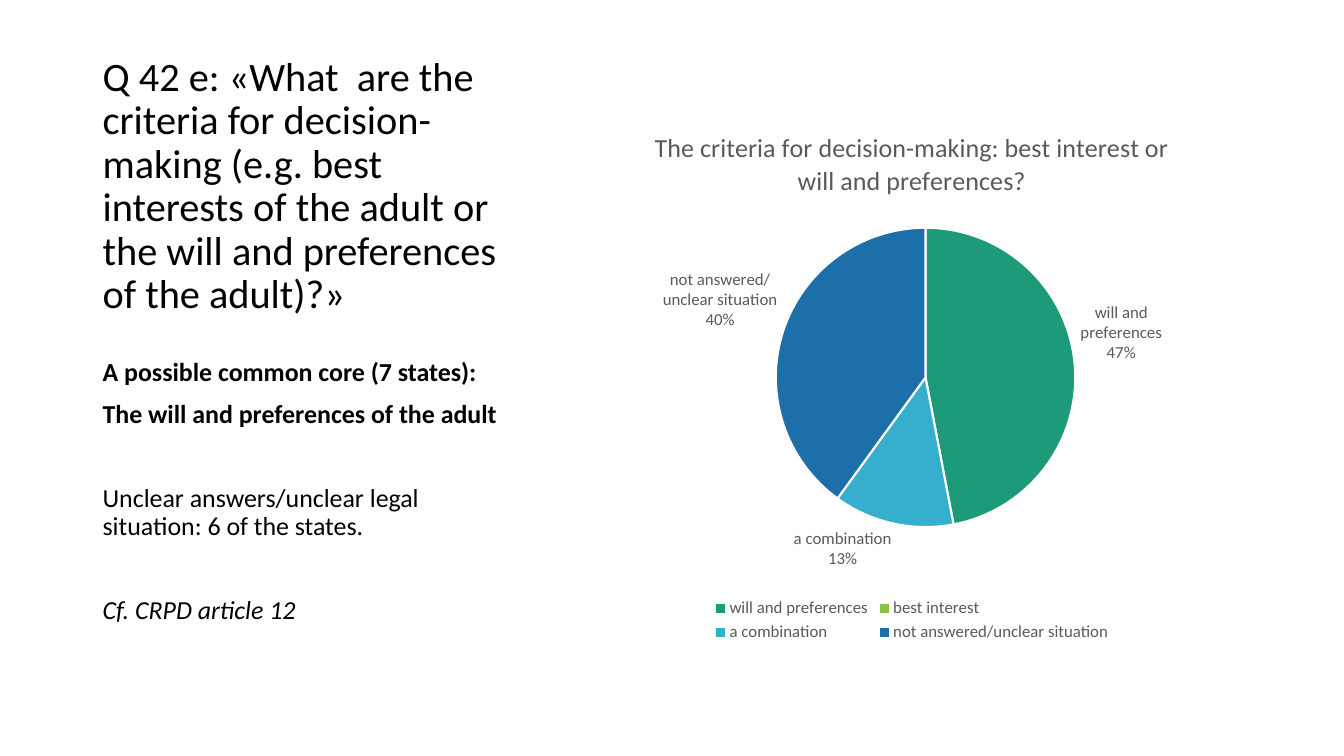
from lxml import etree
from pptx import Presentation
from pptx.chart.data import CategoryChartData
from pptx.dml.color import RGBColor
from pptx.enum.chart import XL_CHART_TYPE, XL_LABEL_POSITION, XL_LEGEND_POSITION
from pptx.enum.text import MSO_ANCHOR
from pptx.oxml import parse_xml
from pptx.oxml.ns import qn
from pptx.util import Inches, Pt

PIE = XL_CHART_TYPE.PIE
OUTER = XL_LABEL_POSITION.OUTSIDE_END
BELOW = XL_LEGEND_POSITION.BOTTOM
TOP, BOTTOM = MSO_ANCHOR.TOP, MSO_ANCHOR.BOTTOM
BLACK = RGBColor(0x00, 0x00, 0x00)
WHITE = RGBColor(0xFF, 0xFF, 0xFF)
GREY = RGBColor(0x59, 0x59, 0x59)
TEAL = RGBColor(0x1D, 0x9A, 0x78)
GREEN = RGBColor(0x8B, 0xC1, 0x45)
AQUA = RGBColor(0x36, 0xAF, 0xCE)
BLUE = RGBColor(0x1D, 0x6F, 0xA9)
FACE = "Calibri"
SPACE = "http://schemas.openxmlformats.org/drawingml/2006/chart"

WIDE, HIGH = 13.33, 7.5
LEFT, COLUMN = 0.92, 4.3

HEADING = "The criteria for decision-making: best interest or will and preferences?"
QUESTION = ("Q 42 e: «What  are the criteria for decision-making (e.g. best interests "
            "of the adult or the will and preferences of the adult)?»")
NOTES = [
    ("A possible common core (7 states):", 0, True, False),
    ("The will and preferences of the adult", 10, True, False),
    ("Unclear answers/unclear legal situation: 6 of the states.", 40, False, False),
    ("Cf. CRPD article 12", 40, False, True),
]
SLICES = [
    ("will and preferences", 47, TEAL),
    ("best interest", 0, GREEN),
    ("a combination", 13, AQUA),
    ("not answered/unclear situation", 40, BLUE),
]


def style(font, size, color):
    font.name = FACE
    font.size = Pt(size)
    font.color.rgb = color


def add_text(slide, box, lines, size, anchor):
    frame = slide.shapes.add_textbox(*map(Inches, box)).text_frame
    frame.word_wrap = True
    frame.vertical_anchor = anchor
    for i, (text, gap, bold, slant) in enumerate(lines):
        par = frame.add_paragraph() if i else frame.paragraphs[0]
        par.text = text
        par.line_spacing = 0.9
        par.space_before = Pt(gap)
        style(par.font, size, BLACK)
        par.font.bold = bold
        par.font.italic = slant


def place_plot(chart, x, y, w, h):
    area = chart.element.find(".//" + qn("c:plotArea"))
    for old in area.findall(qn("c:layout")):
        area.remove(old)
    area.insert(0, parse_xml(
        f'<c:layout xmlns:c="{SPACE}"><c:manualLayout><c:layoutTarget val="inner"/>'
        f'<c:xMode val="edge"/><c:yMode val="edge"/><c:x val="{x}"/><c:y val="{y}"/>'
        f'<c:w val="{w}"/><c:h val="{h}"/></c:manualLayout></c:layout>'))


def add_labels(series):
    labels = series.data_labels
    labels.show_category_name = True
    labels.show_percentage = True
    labels.show_value = False
    labels.number_format = "0%"
    labels.number_format_is_linked = False
    labels.position = OUTER
    style(labels.font, 12, GREY)
    root = series._element.find(qn("c:dLbls"))
    split = etree.Element(qn("c:separator"))
    split.text = "\n"
    last = root.find(qn("c:showBubbleSize"))
    if last is None:
        last = root.find(qn("c:showPercent"))
    last.addnext(split)
    empty = [i for i, (name, value, color) in enumerate(SLICES) if not value]
    for spot, i in enumerate(empty):
        root.insert(spot, parse_xml(
            f'<c:dLbl xmlns:c="{SPACE}"><c:idx val="{i}"/><c:delete val="1"/></c:dLbl>'))


def add_pie(slide, box):
    data = CategoryChartData()
    data.categories = [name for name, value, color in SLICES]
    data.add_series(HEADING, [value for name, value, color in SLICES])
    chart = slide.shapes.add_chart(PIE, *map(Inches, box), data).chart
    style(chart.font, 10, BLACK)
    chart.has_title = True
    title = chart.chart_title.text_frame
    title.text = HEADING
    style(title.paragraphs[0].font, 18.6, GREY)
    title.paragraphs[0].font.bold = False
    chart.chart_title.include_in_layout = False
    chart.has_legend = True
    chart.legend.position = BELOW
    chart.legend.include_in_layout = False
    style(chart.legend.font, 12, GREY)
    plot = chart.plots[0]
    plot.vary_by_categories = True
    series = plot.series[0]
    for i, (name, value, color) in enumerate(SLICES):
        form = series.points[i].format
        form.fill.solid()
        form.fill.fore_color.rgb = color
        form.line.color.rgb = WHITE
        form.line.width = Pt(1.5)
    add_labels(series)
    place_plot(chart, 0.3, 0.22, 0.44, 0.56)


def main():
    deck = Presentation()
    deck.slide_width, deck.slide_height = Inches(WIDE), Inches(HIGH)
    slide = deck.slides.add_slide(deck.slide_layouts[6])
    add_text(slide, (LEFT, 0.5, COLUMN, 2.7), [(QUESTION, 0, False, False)], 28.8, BOTTOM)
    add_text(slide, (LEFT, 3.51, COLUMN, 2.91), NOTES, 18.5, TOP)
    add_pie(slide, (5.67, 1.08, 6.75, 5.33))
    deck.save("out.pptx")


if __name__ == "__main__":
    main()
